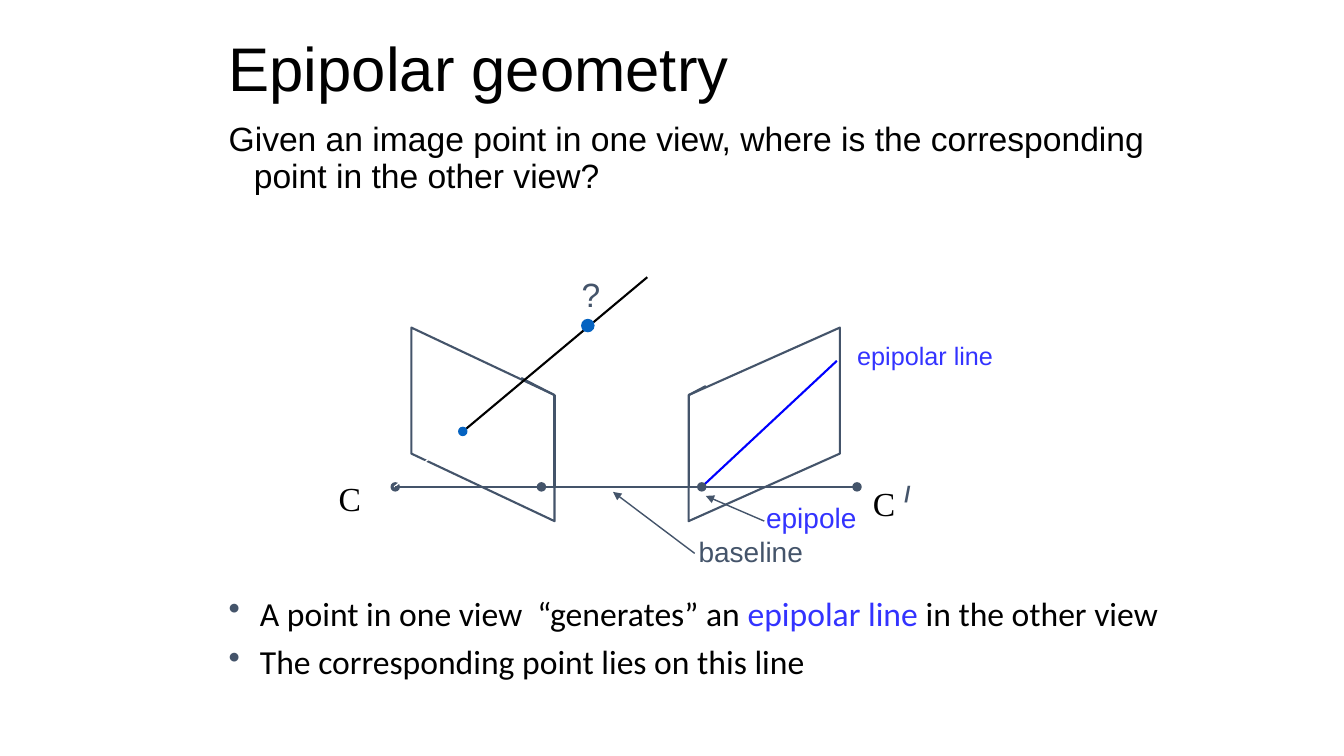
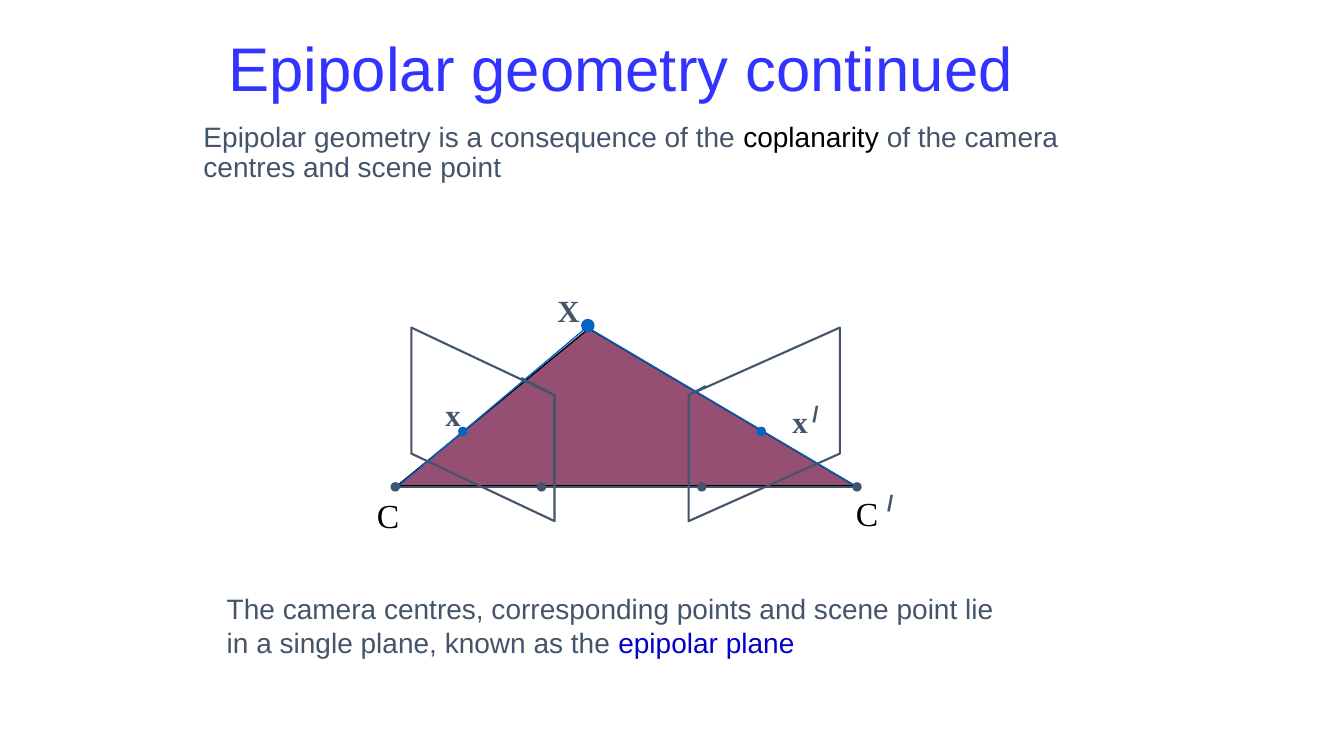
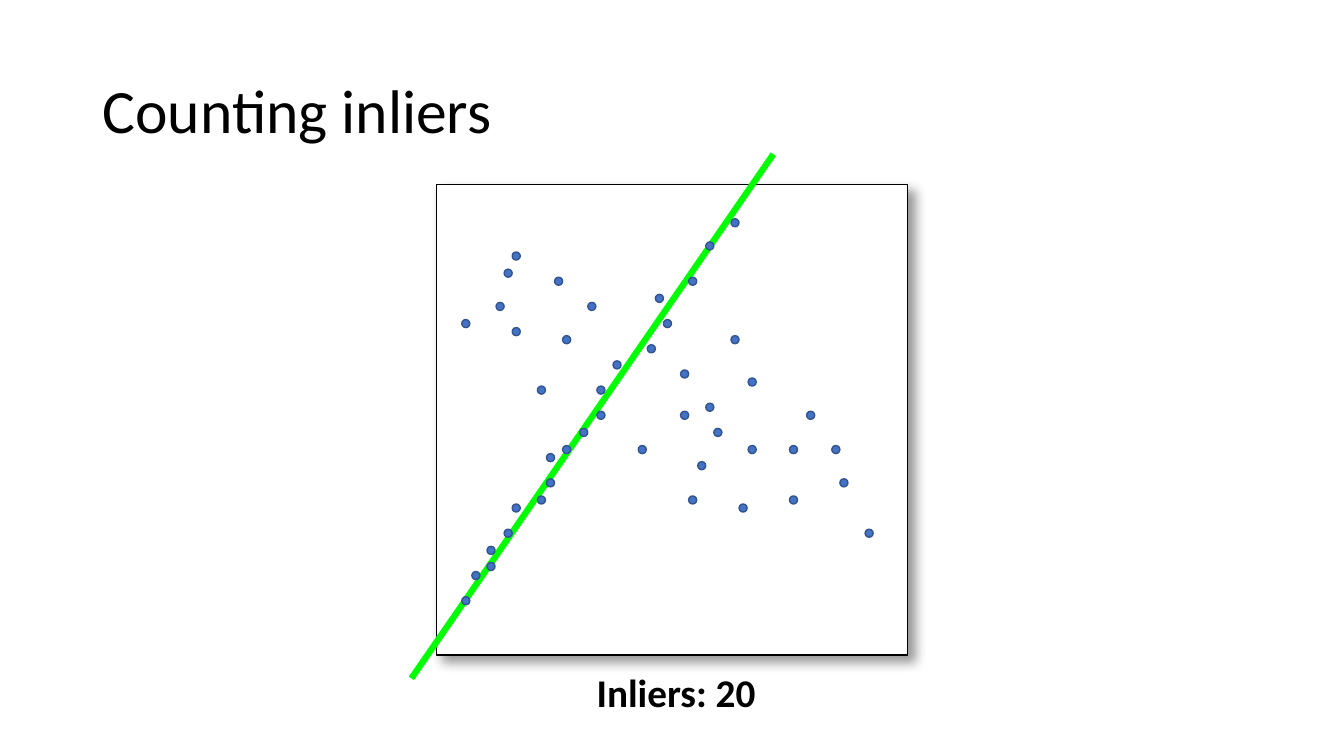
"""Build three slides on epipolar geometry and counting inliers."""
from lxml import etree
from pptx import Presentation
from pptx.dml.color import RGBColor
from pptx.enum.shapes import MSO_CONNECTOR, MSO_SHAPE
from pptx.enum.text import MSO_ANCHOR, PP_ALIGN
from pptx.oxml import parse_xml
from pptx.oxml.ns import nsdecls, qn
from pptx.util import Inches, Pt

STRAIGHT = MSO_CONNECTOR.STRAIGHT
OVAL, RECTANGLE = MSO_SHAPE.OVAL, MSO_SHAPE.RECTANGLE
TOP, MIDDLE = MSO_ANCHOR.TOP, MSO_ANCHOR.MIDDLE
CENTER = PP_ALIGN.CENTER

ARIAL, CALIBRI, TIMES = "Arial", "Calibri", "Times New Roman"
BLACK, WHITE, SLATE = "000000", "FFFFFF", "44546A"
BLUE, RAY_BLUE, LINE_BLUE, PLANE_BLUE = "3333FF", "0563C1", "0000FF", "0000CC"
PLUM, GREEN, DOT_FILL, DOT_EDGE = "954F72", "00FF00", "4472C4", "325491"
DOT = 0.08


def rgb(color):
    return RGBColor.from_string(color)


def add_text(slide, box, paragraphs, size, font=ARIAL, bold=False,
             anchor=TOP, spacing=None, wrap=True):
    frame = slide.shapes.add_textbox(*map(Inches, box)).text_frame
    frame.word_wrap = wrap
    frame.vertical_anchor = anchor
    for index, runs in enumerate(paragraphs):
        paragraph = frame.add_paragraph() if index else frame.paragraphs[0]
        paragraph.line_spacing = spacing
        for text, color in runs:
            run = paragraph.add_run()
            run.text = text
            run.font.name = font
            run.font.size = Pt(size)
            run.font.bold = bold
            run.font.color.rgb = rgb(color)
    return frame


prs = Presentation()
prs.slide_width, prs.slide_height = Inches(13.33), Inches(7.5)
geometry, coplanarity, inliers = [
    prs.slides.add_slide(prs.slide_layouts[6]) for _ in range(3)]

for slide, box, title, color, font in [
    (geometry, (2.17, 0.08, 9, 1.25), "Epipolar geometry", BLACK, ARIAL),
    (coplanarity, (2.17, 0.08, 9, 1.25), "Epipolar geometry continued", BLUE, ARIAL),
    (inliers, (0.92, 0.4, 11.5, 1.45), "Counting inliers", BLACK, CALIBRI),
]:
    add_text(slide, box, [[(title, color)]], 44, font, anchor=MIDDLE, spacing=0.9)

epipolar_plane = [(3.94, 4.82), (8.48, 4.82), (5.84, 3.26)]
left_view = [(4.08, 3.25), (4.08, 4.5), (5.5, 5.17), (5.5, 3.92)]
right_view = [(8.33, 3.25), (8.33, 4.5), (6.83, 5.17), (6.83, 3.92)]
for slide, corners, fill, outline, width in [
    (coplanarity, epipolar_plane, PLUM, BLACK, 1),
    (geometry, left_view, None, SLATE, 1.5),
    (geometry, right_view, None, SLATE, 1.5),
    (coplanarity, left_view, None, SLATE, 1.5),
    (coplanarity, right_view, None, SLATE, 1.5),
]:
    points = [(Inches(x), Inches(y)) for x, y in corners]
    builder = slide.shapes.build_freeform(*points[0])
    builder.add_line_segments(points[1:], close=True)
    outline_shape = builder.convert_to_shape()
    outline_shape.shadow.inherit = False
    if fill:
        outline_shape.fill.solid()
        outline_shape.fill.fore_color.rgb = rgb(fill)
    else:
        outline_shape.fill.background()
    outline_shape.line.color.rgb = rgb(outline)
    outline_shape.line.width = Pt(width)

plot = inliers.shapes.add_shape(
    RECTANGLE, Inches(4.33), Inches(1.83), Inches(4.67), Inches(4.67))
plot.fill.solid()
plot.fill.fore_color.rgb = rgb(WHITE)
plot.line.color.rgb = rgb(BLACK)
plot.line.width = Pt(1)
plot.shadow.inherit = False
plot._element.spPr.find(qn("a:effectLst")).append(parse_xml(
    f'<a:outerShdw {nsdecls("a")} blurRad="{Pt(8)}" dist="{Pt(6)}" dir="2700000" '
    f'algn="tl" rotWithShape="0"><a:srgbClr val="{BLACK}"><a:alpha val="40000"/>'
    '</a:srgbClr></a:outerShdw>'))

left_camera, right_camera = (3.92, 4.83), (8.5, 4.83)
left_epipole, right_epipole = (5.37, 4.83), (6.96, 4.83)
left_image, right_image, scene_point = (4.59, 4.28), (7.55, 4.28), (5.83, 3.23)
view_edges = [
    ((6.83, 3.92), (6.83, 4.83), SLATE, 1.5, False),
    ((5.5, 3.92), (5.5, 4.83), SLATE, 1.5, False),
    ((5.5, 3.92), (5.17, 3.75), SLATE, 1.5, False),
    ((7, 3.83), (6.83, 3.92), SLATE, 1.5, False),
]
baseline = (left_camera, right_camera, SLATE, 1, False)
camera_dots = [(*left_camera, DOT, SLATE, SLATE), (*right_camera, DOT, SLATE, SLATE)]
view_dots = [
    (*left_epipole, DOT, SLATE, SLATE),
    (*right_epipole, DOT, SLATE, SLATE),
    (*left_image, DOT, RAY_BLUE, RAY_BLUE),
    (*scene_point, 0.12, RAY_BLUE, RAY_BLUE),
]
sample_centers = [
    (5.46, 4.79), (5.62, 4.46), (5.12, 5.04), (5.37, 4.96), (5.04, 5.29),
    (4.87, 5.46), (4.72, 5.71), (4.62, 5.96), (4.87, 5.62), (5.46, 4.54),
    (5.79, 4.29), (5.96, 4.12), (5.96, 3.87), (6.12, 3.62), (6.46, 3.46),
    (6.62, 3.21), (6.54, 2.96), (6.87, 2.79), (7.04, 2.44), (7.29, 2.21),
    (7.46, 4.46), (6.96, 4.62), (6.79, 4.12), (7.12, 4.29), (7.04, 4.04),
    (7.46, 3.79), (7.29, 3.37), (6.79, 3.71), (6.37, 4.46), (6.87, 4.96),
    (7.37, 5.04), (7.87, 4.96), (8.37, 4.79), (8.29, 4.46), (7.87, 4.46),
    (8.04, 4.12), (8.62, 5.29), (5.87, 3.04), (5.62, 3.37), (5.12, 3.29),
    (5.37, 3.87), (5.54, 2.79), (5.04, 2.71), (4.62, 3.21), (4.96, 3.04),
    (5.12, 2.54),
]
for slide, lines, dots in [
    (geometry, view_edges, camera_dots),
    (geometry, [
        ((6.95, 4.84), (8.3, 3.58), LINE_BLUE, 1.5, False),
        ((3.91, 4.83), (4.59, 4.28), WHITE, 1, False),
        ((4.58, 4.29), (6.42, 2.75), BLACK, 1.5, False),
        baseline,
        ((6.89, 5.49), (6.08, 4.88), SLATE, 1, True),
        ((7.58, 5.17), (7, 4.92), SLATE, 1, True),
    ], view_dots),
    (coplanarity, view_edges, camera_dots),
    (coplanarity, [
        baseline,
        ((5.83, 3.25), right_camera, RAY_BLUE, 1, False),
        ((5.84, 3.23), (3.93, 4.84), RAY_BLUE, 1, False),
    ], view_dots + [(*right_image, DOT, RAY_BLUE, RAY_BLUE)]),
    (inliers, [((4.08, 6.73), (7.67, 1.53), GREEN, 4.5, False)],
     [(x, y, DOT, DOT_FILL, DOT_EDGE) for x, y in sample_centers]),
]:
    for start, end, color, width, arrow in lines:
        line = slide.shapes.add_connector(STRAIGHT, *map(Inches, start + end))
        line.line.color.rgb = rgb(color)
        line.line.width = Pt(width)
        properties = line._element.spPr
        if arrow:
            etree.SubElement(properties.find(qn("a:ln")), qn("a:tailEnd"), type="triangle")
        etree.SubElement(properties, qn("a:effectLst"))
    for x, y, size, fill, outline in dots:
        dot = slide.shapes.add_shape(
            OVAL, Inches(x - size / 2), Inches(y - size / 2), Inches(size), Inches(size))
        dot.shadow.inherit = False
        dot.fill.solid()
        dot.fill.fore_color.rgb = rgb(fill)
        dot.line.color.rgb = rgb(outline)
        dot.line.width = Pt(1)

for slide, box, label, size, font, color, bold in [
    (geometry, (5.67, 2.67, 0.5, 0.5), "?", 24, ARIAL, SLATE, False),
    (geometry, (6.83, 5.25, 1.33, 0.43), "baseline", 20, ARIAL, SLATE, False),
    (geometry, (7.5, 4.92, 1.17, 0.43), "epipole", 20, ARIAL, BLUE, False),
    (geometry, (3.26, 4.69, 0.49, 0.5), "C", 24, TIMES, BLACK, False),
    (geometry, (8.56, 4.74, 0.49, 0.5), "C", 24, TIMES, BLACK, False),
    (geometry, (8.87, 4.71, 0.55, 0.37), "/", 16, ARIAL, SLATE, True),
    (coplanarity, (4.32, 3.88, 0.33, 0.47), "x", 22, TIMES, SLATE, True),
    (coplanarity, (7.76, 3.95, 0.33, 0.47), "x", 22, TIMES, SLATE, True),
    (coplanarity, (7.96, 3.92, 0.55, 0.37), "/", 16, ARIAL, SLATE, True),
    (coplanarity, (5.43, 2.85, 0.4, 0.47), "X", 22, TIMES, SLATE, True),
    (coplanarity, (3.64, 4.86, 0.49, 0.5), "C", 24, TIMES, BLACK, False),
    (coplanarity, (8.39, 4.84, 0.49, 0.5), "C", 24, TIMES, BLACK, False),
    (coplanarity, (8.7, 4.8, 0.55, 0.37), "/", 16, ARIAL, SLATE, True),
]:
    add_text(slide, box, [[(label, color)]], size, font, bold)

epipolar_label = add_text(geometry, (8.4, 3.33, 1.55, 0.4), [[("epipolar line", BLUE)]],
                          18, anchor=MIDDLE, wrap=False)
epipolar_label.paragraphs[0].alignment = CENTER
add_text(inliers, (5.82, 6.58, 1.8, 0.57), [[("Inliers: 20", BLACK)]],
         28, CALIBRI, bold=True, wrap=False)

question = add_text(geometry, (1.67, 1.17, 10, 1.08), [[
    ("Given an image point in one view, where is the corresponding point "
     "in the other view?", BLACK)]], 24, spacing=0.9)
conclusions = add_text(geometry, (1.67, 5.83, 10, 1.08), [
    [("A point in one view  “generates” an ", BLACK), ("epipolar line ", BLUE),
     ("in the other view", BLACK)],
    [("The corresponding point lies on this line", BLACK)],
], 24, CALIBRI)
for frame, margin, hanging in [(question, 0.75, 0.25), (conclusions, 0.81, 0.31)]:
    for paragraph in frame.paragraphs:
        indent = paragraph._p.get_or_add_pPr()
        indent.set("marL", str(Inches(margin)))
        indent.set("indent", str(-Inches(hanging)))
for paragraph in conclusions.paragraphs:
    paragraph.space_before = Pt(6)
    bullet = paragraph._p.get_or_add_pPr()
    bullet_color = etree.SubElement(bullet, qn("a:buClr"))
    etree.SubElement(bullet_color, qn("a:srgbClr"), val=SLATE)
    etree.SubElement(bullet, qn("a:buChar"), char="•")

add_text(coplanarity, (1.92, 1.17, 9, 1.08), [[
    ("Epipolar geometry is a consequence of the ", SLATE), ("coplanarity ", BLACK),
    ("of the camera centres and scene point", SLATE)]], 20, spacing=0.9)
add_text(coplanarity, (2.15, 5.82, 7.89, 0.77), [[
    ("The camera centres, corresponding points and scene point lie in a single plane, "
     "known as the ", SLATE), ("epipolar plane", PLANE_BLUE)]], 20)

prs.save("out.pptx")
